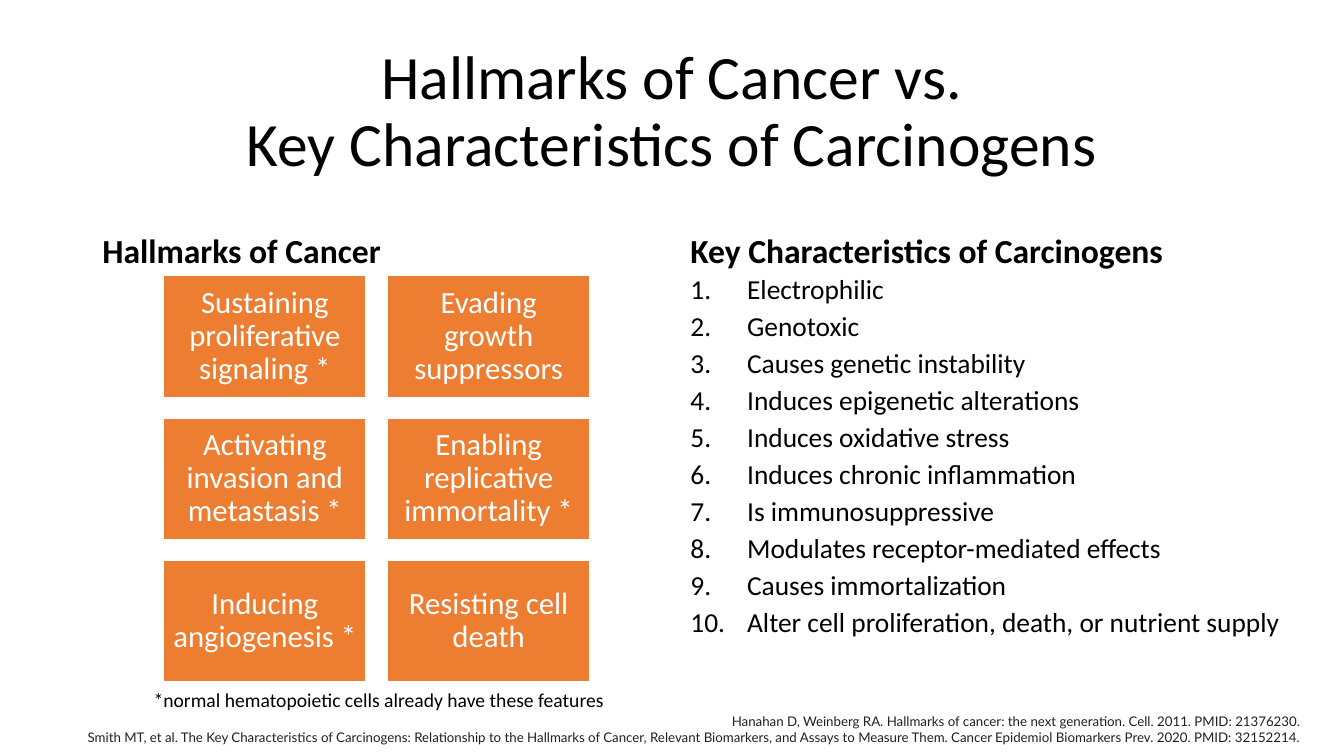
import pptx
import pptx.dml.color
import pptx.enum.shapes
import pptx.enum.text
import pptx.oxml.ns
import pptx.util
from lxml import etree
from pptx.util import Cm

BLACK = pptx.dml.color.RGBColor(0x00, 0x00, 0x00)
WHITE = pptx.dml.color.RGBColor(0xFF, 0xFF, 0xFF)
ORANGE = pptx.dml.color.RGBColor(0xED, 0x7D, 0x31)
DARK_GREY = pptx.dml.color.RGBColor(0x21, 0x21, 0x21)

ALIGN = pptx.enum.text.PP_ALIGN
ANCHOR = pptx.enum.text.MSO_ANCHOR

HALLMARKS = [
    "Sustaining proliferative signaling *",
    "Evading growth suppressors",
    "Activating invasion and metastasis *",
    "Enabling replicative immortality *",
    "Inducing angiogenesis *",
    "Resisting cell death",
]
CHARACTERISTICS = [
    "Electrophilic",
    "Genotoxic",
    "Causes genetic instability",
    "Induces epigenetic alterations",
    "Induces oxidative stress",
    "Induces chronic inflammation",
    "Is immunosuppressive",
    "Modulates receptor-mediated effects",
    "Causes immortalization",
    "Alter cell proliferation, death, or nutrient supply",
]
REFERENCES = [
    "Hanahan D, Weinberg RA. Hallmarks of cancer: the next generation. Cell. 2011. PMID: 21376230.",
    "Smith MT, et al. The Key Characteristics of Carcinogens: Relationship to the Hallmarks of Cancer, "
    "Relevant Biomarkers, and Assays to Measure Them. Cancer Epidemiol Biomarkers Prev. 2020. "
    "PMID: 32152214.",
]


def number_paragraph(paragraph):
    """Give a paragraph an automatic number with a hanging indent."""
    properties = paragraph._p.get_or_add_pPr()
    properties.set("marL", str(Cm(1.43)))
    properties.set("indent", str(-Cm(1.43)))
    number = etree.SubElement(properties, pptx.oxml.ns.qn("a:buAutoNum"))
    number.set("type", "arabicPeriod")


def write_lines(shape, lines, size, color=BLACK, font="Calibri", bold=False, align=ALIGN.LEFT,
                anchor=ANCHOR.TOP, spacing=1.0, gap=0, numbered=False):
    frame = shape.text_frame
    frame.word_wrap = True
    frame.vertical_anchor = anchor
    for index, line in enumerate(lines):
        paragraph = frame.add_paragraph() if index else frame.paragraphs[0]
        paragraph.text = line
        if numbered:
            number_paragraph(paragraph)
        paragraph.alignment = align
        paragraph.line_spacing = spacing
        if index and gap:
            paragraph.space_before = pptx.util.Pt(gap)
        paragraph.font.name = font
        paragraph.font.size = pptx.util.Pt(size)
        paragraph.font.bold = bold
        paragraph.font.color.rgb = color


def add_text(slide, left, top, width, height, lines, size, **style):
    box = slide.shapes.add_textbox(Cm(left), Cm(top), Cm(width), Cm(height))
    write_lines(box, lines, size, **style)


def add_heading(slide, left, text):
    add_text(slide, left, 4.67, 14.35, 2.28, [text], 24, bold=True,
             anchor=ANCHOR.BOTTOM, spacing=0.9)


def add_hallmark(slide, left, top, text):
    shape = slide.shapes.add_shape(pptx.enum.shapes.MSO_SHAPE.RECTANGLE,
                                   Cm(left), Cm(top), Cm(5.11), Cm(3.07))
    shape.shadow.inherit = False
    shape.fill.solid()
    shape.fill.fore_color.rgb = ORANGE
    shape.line.color.rgb = WHITE
    shape.line.width = pptx.util.Pt(1)
    frame = shape.text_frame
    frame.margin_left = frame.margin_right = Cm(0.23)
    frame.margin_top = frame.margin_bottom = Cm(0.23)
    write_lines(shape, [text], 22, color=WHITE, align=ALIGN.CENTER,
                anchor=ANCHOR.MIDDLE, spacing=0.9)


def main():
    presentation = pptx.Presentation()
    presentation.slide_width = Cm(33.87)
    presentation.slide_height = Cm(19.05)
    slide = presentation.slides.add_slide(presentation.slide_layouts[6])

    # Title
    add_text(slide, 2.33, 1.01, 29.21, 3.68,
             ["Hallmarks of Cancer vs.\vKey Characteristics of Carcinogens"], 44,
             align=ALIGN.CENTER, anchor=ANCHOR.MIDDLE, spacing=0.9)

    # Left column: two-by-three grid of hallmarks
    add_heading(slide, 2.33, "Hallmarks of Cancer")
    for index, hallmark in enumerate(HALLMARKS):
        row, column = divmod(index, 2)
        add_hallmark(slide, 4.12 + 5.64 * column, 6.95 + 3.58 * row, hallmark)
    add_text(slide, 3.62, 17.22, 12.19, 0.86,
             ["*normal hematopoietic cells already have these features"], 14)

    # Right column: numbered list of characteristics
    add_heading(slide, 17.15, "Key Characteristics of Carcinogens")
    add_text(slide, 17.15, 6.95, 15.88, 10.24, CHARACTERISTICS, 19.6,
             spacing=0.7, gap=10, numbered=True)

    # References
    add_text(slide, 0, 17.86, 33.02, 1.07, REFERENCES, 9.5, color=DARK_GREY,
             font="Lato", align=ALIGN.RIGHT)

    presentation.save("out.pptx")


if __name__ == "__main__":
    main()
